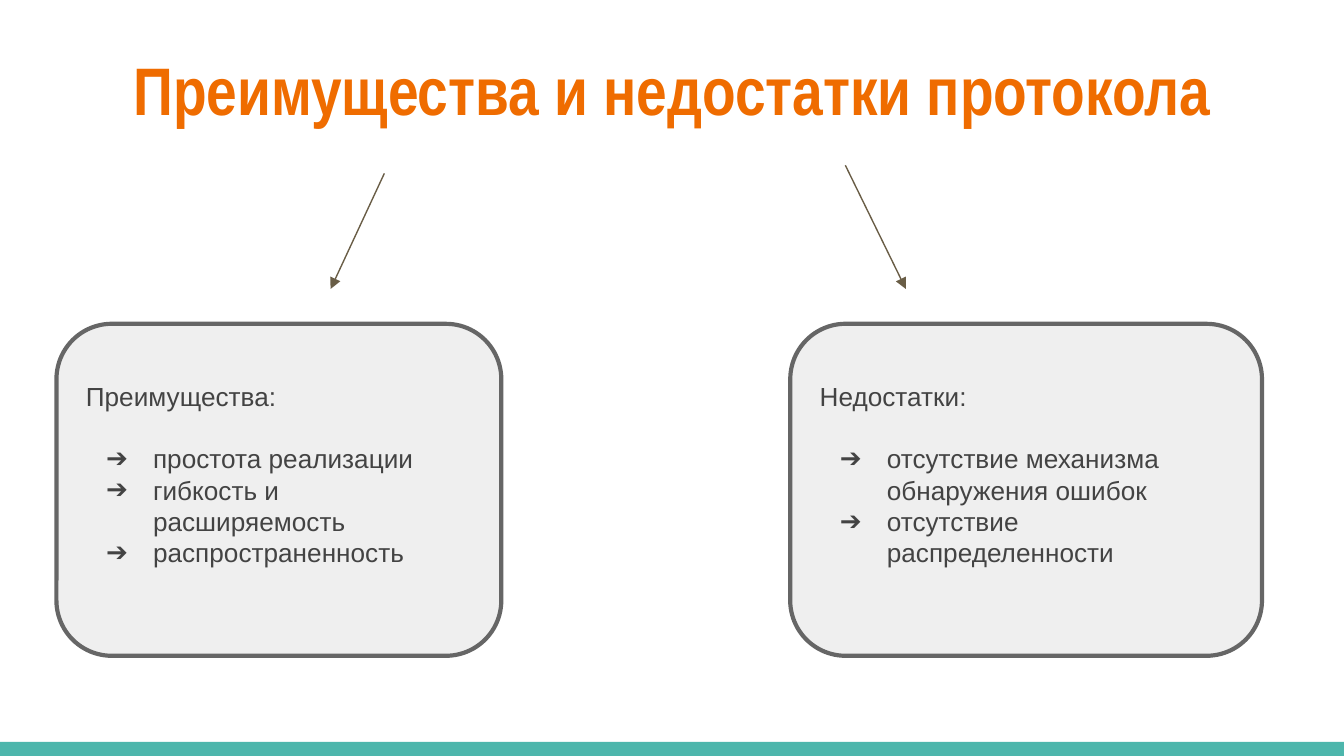
from lxml.etree import SubElement
from pptx import Presentation
from pptx.dml.color import RGBColor
from pptx.enum.shapes import MSO_CONNECTOR, MSO_SHAPE
from pptx.enum.text import MSO_ANCHOR, MSO_AUTO_SIZE, PP_ALIGN
from pptx.oxml.ns import qn
from pptx.util import Inches, Pt

ORANGE, TEAL, BROWN = "EF6C00", "4DB6AC", "695D46"
PANEL_FILL, PANEL_LINE, TEXT = "EFEFEF", "666666", "434343"
TEXT_LINE = 0.23  # height of one line of panel text, inches


def color(hex_value):
    return RGBColor.from_string(hex_value)


def style_text(paragraph, font_name, size, hex_value, bold=False):
    for run in paragraph.runs:
        run.font.name = font_name
        run.font.size = Pt(size)
        run.font.bold = bold
        run.font.color.rgb = color(hex_value)


def set_margins(frame, margin=0.1):
    frame.margin_left = frame.margin_right = Inches(margin)
    frame.margin_top = frame.margin_bottom = Inches(margin)
    frame.word_wrap = True
    frame.auto_size = MSO_AUTO_SIZE.NONE


def add_block(slide, preset, left, top, width, height, fill):
    block = slide.shapes.add_shape(
        preset, Inches(left), Inches(top), Inches(width), Inches(height))
    block.shadow.inherit = False
    block.fill.solid()
    block.fill.fore_color.rgb = color(fill)
    return block


def add_footer_strip(slide, left, top, width, height):
    strip = add_block(slide, MSO_SHAPE.RECTANGLE, left, top, width, height, TEAL)
    strip.line.fill.background()


def place_title(slide, left, top, width, height, heading):
    title = slide.shapes.title
    title.left, title.top = Inches(left), Inches(top)
    title.width, title.height = Inches(width), Inches(height)
    frame = title.text_frame
    frame.text = heading
    set_margins(frame)
    frame.vertical_anchor = MSO_ANCHOR.TOP
    frame.paragraphs[0].alignment = PP_ALIGN.CENTER
    style_text(frame.paragraphs[0], "Arial Narrow", 36, ORANGE, bold=True)


def add_arrow_bullet(paragraph):
    properties = paragraph._p.get_or_add_pPr()
    properties.set("marL", str(Inches(0.5)))
    properties.set("indent", str(Inches(-0.35)))
    bullet_color = SubElement(properties, qn("a:buClr"))
    SubElement(bullet_color, qn("a:srgbClr"), val=TEXT)
    SubElement(properties, qn("a:buFont"), typeface="Arial")
    SubElement(properties, qn("a:buChar"), char="➔")


def add_panel(slide, left, top, width, height, heading, points):
    panel = add_block(slide, MSO_SHAPE.FLOWCHART_ALTERNATE_PROCESS,
                      left, top, width, height, PANEL_FILL)
    panel.line.color.rgb = color(PANEL_LINE)
    panel.line.width = Pt(2.25)
    frame = panel.text_frame
    set_margins(frame)
    frame.margin_bottom = Inches(0.1 + TEXT_LINE)  # lifts the text by half a line
    frame.vertical_anchor = MSO_ANCHOR.MIDDLE
    frame.text = "\n".join([heading, *points])
    for index, paragraph in enumerate(frame.paragraphs):
        paragraph.alignment = PP_ALIGN.LEFT
        paragraph.space_after = Inches(0 if index else TEXT_LINE)
        style_text(paragraph, "Arial", 14, TEXT)
        if index:
            add_arrow_bullet(paragraph)


def add_arrow(slide, start, end):
    arrow = slide.shapes.add_connector(
        MSO_CONNECTOR.STRAIGHT, *(Inches(value) for value in (*start, *end)))
    arrow.line.color.rgb = color(BROWN)
    arrow.line.width = Pt(0.75)
    SubElement(arrow.line._get_or_add_ln(), qn("a:tailEnd"), type="triangle")
    SubElement(arrow._element.spPr, qn("a:effectLst"))


def main():
    presentation = Presentation()
    # 16:9 page, 10 inches wide
    presentation.slide_width = Inches(10)
    presentation.slide_height = Inches(10) * 9 // 16
    slide = presentation.slides.add_slide(presentation.slide_layouts[5])

    # Strip along the bottom edge
    add_footer_strip(slide, 0, 5.52, 10, 0.11)

    # Heading
    place_title(slide, 0.34, 0.26, 9.32, 0.77,
                "Преимущества и недостатки протокола")

    # Two panels side by side
    panel_top, panel_height = 2.41, 2.47
    add_panel(slide, 0.42, panel_top, 3.31, panel_height, "Преимущества:",
              ["простота реализации", "гибкость и расширяемость",
               "распространенность"])
    add_panel(slide, 5.88, panel_top, 3.51, panel_height, "Недостатки:",
              ["отсутствие механизма обнаружения ошибок",
               "отсутствие распределенности"])

    # Arrows from the heading to the panels
    add_arrow(slide, (2.86, 1.29), (2.46, 2.15))
    add_arrow(slide, (6.29, 1.23), (6.74, 2.15))

    presentation.save("out.pptx")


if __name__ == "__main__":
    main()
